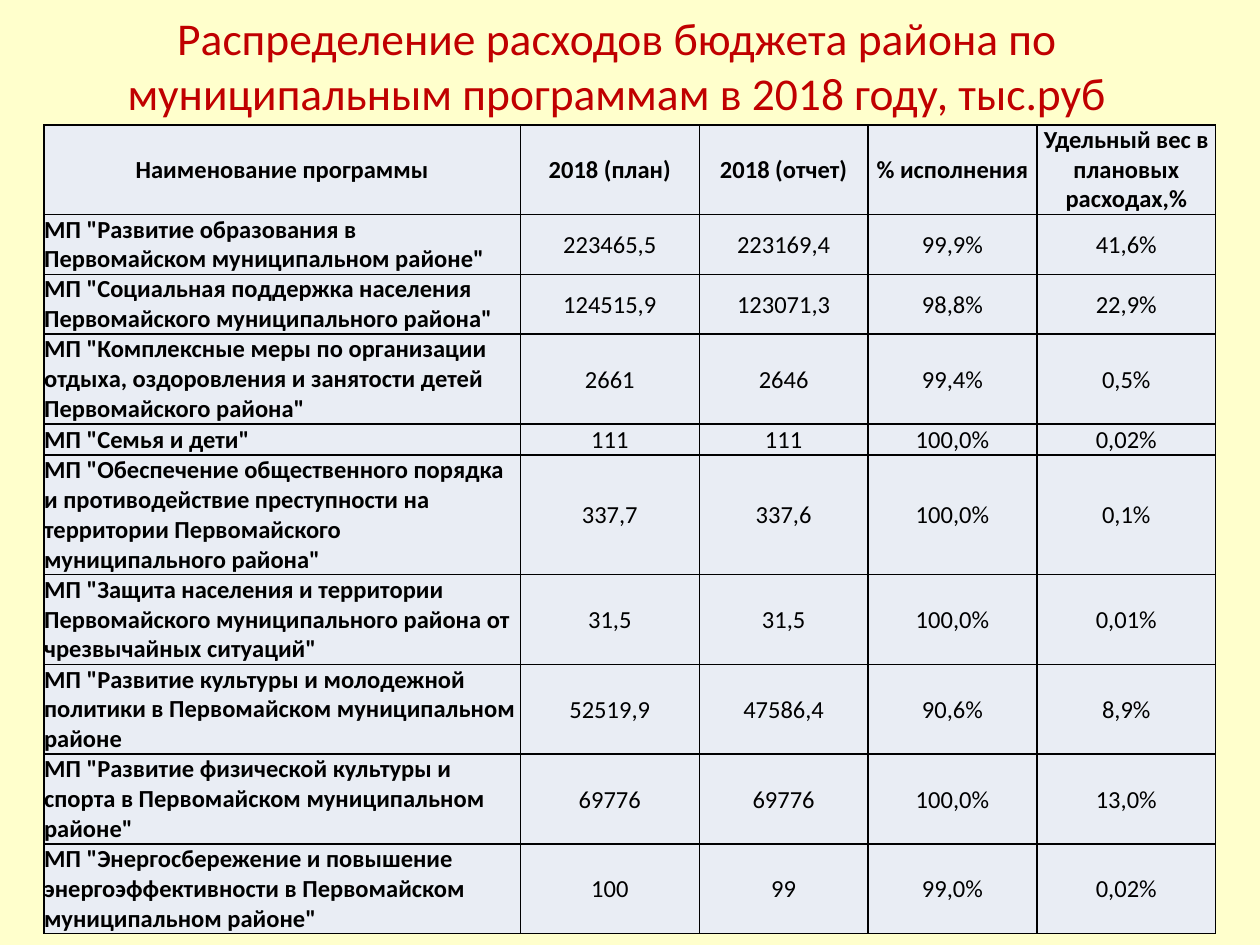
import pptx
import pptx.dml.color
import pptx.enum.text
import pptx.util
from lxml import etree
from pptx.oxml.ns import qn

Inches, Pt = pptx.util.Inches, pptx.util.Pt
RGBColor = pptx.dml.color.RGBColor
ALIGN = pptx.enum.text.PP_ALIGN
ANCHOR = pptx.enum.text.MSO_ANCHOR

CREAM = RGBColor(0xFF, 0xFF, 0xCC)
RED = RGBColor(0xC0, 0x00, 0x00)
BLACK = RGBColor(0x00, 0x00, 0x00)
PALE_BLUE = RGBColor(0xE9, 0xED, 0xF4)

TITLE = "Распределение расходов бюджета района по муниципальным программам в 2018 году, тыс.руб"
HEADERS = ("Наименование программы", "2018 (план)", "2018 (отчет)", "% исполнения",
           "Удельный вес в плановых расходах,%")
PROGRAMS = [
    ('МП "Развитие образования в Первомайском муниципальном районе"',
     "223465,5", "223169,4", "99,9%", "41,6%"),
    ('МП "Социальная поддержка населения Первомайского муниципального района"',
     "124515,9", "123071,3", "98,8%", "22,9%"),
    ('МП "Комплексные меры по организации отдыха, оздоровления и занятости детей '
     'Первомайского района"', "2661", "2646", "99,4%", "0,5%"),
    ('МП "Семья и дети"', "111", "111", "100,0%", "0,02%"),
    ('МП "Обеспечение общественного порядка и противодействие преступности на территории '
     'Первомайского муниципального района"', "337,7", "337,6", "100,0%", "0,1%"),
    ('МП "Защита населения и территории Первомайского муниципального района от '
     'чрезвычайных ситуаций"', "31,5", "31,5", "100,0%", "0,01%"),
    ('МП "Развитие культуры и молодежной политики в Первомайском муниципальном районе',
     "52519,9", "47586,4", "90,6%", "8,9%"),
    ('МП "Развитие физической культуры и спорта в Первомайском муниципальном районе"',
     "69776", "69776", "100,0%", "13,0%"),
    ('МП "Энергосбережение и повышение энергоэффективности в Первомайском '
     'муниципальном районе"', "100", "99", "99,0%", "0,02%"),
]
COLUMN_WIDTHS = (3.78, 1.42, 1.34, 1.34, 1.42)
ROW_LINES = (3, 2, 2, 3, 1, 4, 3, 3, 3, 3)
LINE_HEIGHT = Pt(17.1)


def write(frame, text, size=14, color=BLACK, bold=False, align=ALIGN.CENTER):
    para = frame.paragraphs[0]
    para.alignment = align
    span = para.add_run()
    span.text = text
    span.font.name = "Calibri"
    span.font.size = Pt(size)
    span.font.bold = bold
    span.font.color.rgb = color
    return span


def add_line(parent, tag, color, width):
    line = etree.Element(qn(tag), w=str(Pt(width)))
    fill = etree.SubElement(line, qn("a:solidFill"))
    etree.SubElement(fill, qn("a:srgbClr"), val=str(color))
    parent.insert(0, line)


def style_cell(cell, anchor, inset):
    cell.vertical_anchor = anchor
    cell.margin_left = cell.margin_top = cell.margin_right = Inches(inset)
    cell.margin_bottom = 0
    properties = cell._tc.get_or_add_tcPr()
    for side in "BTRL":
        add_line(properties, f"a:ln{side}", BLACK, 1)
    cell.fill.solid()
    cell.fill.fore_color.rgb = PALE_BLUE


def add_title(slide):
    title = slide.shapes.title
    title.left, title.top = Inches(0.28), Inches(0.13)
    title.width, title.height = Inches(9.24), Inches(0.77)
    frame = title.text_frame
    frame.word_wrap = True
    frame.auto_size = pptx.enum.text.MSO_AUTO_SIZE.NONE
    frame.vertical_anchor = ANCHOR.MIDDLE
    span = write(frame, TITLE, size=26, color=RED)
    add_line(span.font._element, "a:ln", RED, 0.75)


def add_budget_table(slide):
    rows = [HEADERS] + PROGRAMS
    table = slide.shapes.add_table(
        len(rows), len(HEADERS), Inches(0.35), Inches(0.99),
        Inches(sum(COLUMN_WIDTHS)), LINE_HEIGHT * sum(ROW_LINES)).table
    table.horz_banding = False
    for column, width in zip(table.columns, COLUMN_WIDTHS):
        column.width = Inches(width)
    for row, lines in zip(table.rows, ROW_LINES):
        row.height = LINE_HEIGHT * lines

    for row_index, values in enumerate(rows):
        for column_index, text in enumerate(values):
            cell = table.cell(row_index, column_index)
            is_header = row_index == 0
            is_name = column_index == 0 and not is_header
            is_last_header = is_header and column_index == len(HEADERS) - 1
            write(cell.text_frame, text, bold=is_header or is_name,
                  align=ALIGN.LEFT if is_name else ALIGN.CENTER)
            style_cell(cell, ANCHOR.BOTTOM if is_name or is_last_header else ANCHOR.MIDDLE,
                       0 if is_header or is_name else 0.01)


def main():
    deck = pptx.Presentation()
    deck.slide_width, deck.slide_height = Inches(10), Inches(7.5)
    slide = deck.slides.add_slide(deck.slide_layouts.get_by_name("Title Only"))
    slide.background.fill.solid()
    slide.background.fill.fore_color.rgb = CREAM
    add_title(slide)
    add_budget_table(slide)
    deck.save("out.pptx")


if __name__ == "__main__":
    main()
